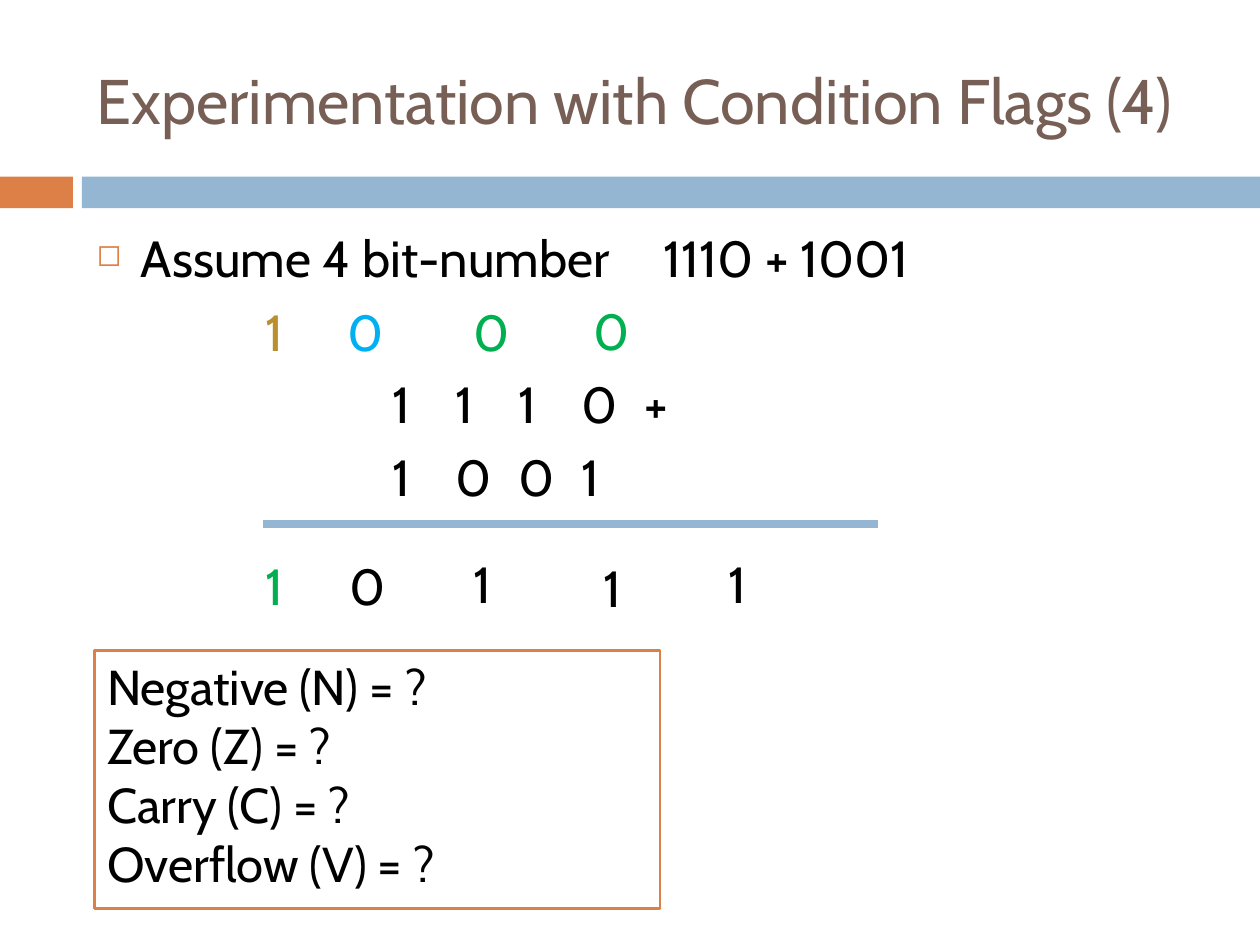
from lxml import etree
from pptx import Presentation
from pptx.dml.color import RGBColor
from pptx.enum.shapes import MSO_CONNECTOR, MSO_SHAPE
from pptx.enum.text import MSO_ANCHOR, MSO_AUTO_SIZE, PP_ALIGN
from pptx.oxml.ns import qn
from pptx.util import Cm, Pt

RECTANGLE = MSO_SHAPE.RECTANGLE
STRAIGHT = MSO_CONNECTOR.STRAIGHT
TOP, MIDDLE = MSO_ANCHOR.TOP, MSO_ANCHOR.MIDDLE
LEFT = PP_ALIGN.LEFT
FIT_SHAPE = MSO_AUTO_SIZE.SHAPE_TO_FIT_TEXT

BLACK, WHITE, BROWN = "000000", "FFFFFF", "775F55"
ORANGE, BLUE = "DD8047", "94B6D2"
GREEN, SKY, GOLD = "00B050", "00B0F0", "BA8F2D"

BODY_INDENT = 0.89
FIRST_BIT_INDENT = BODY_INDENT + 2 * 2.54


def color(value):
    return RGBColor.from_string(value)


def apply_format(target, values):
    for name, value in values.items():
        setattr(target, name, value)


def write(paragraph, text, size, text_color=BLACK, **values):
    apply_format(paragraph, {"alignment": LEFT, **values})
    run = paragraph.add_run()
    run.text = text
    apply_format(run.font, {"name": "Cabin", "size": Pt(size)})
    run.font.color.rgb = color(text_color)


def add_text_frame(slide, box, **values):
    frame = slide.shapes.add_textbox(*map(Cm, box)).text_frame
    apply_format(frame, {"word_wrap": True, "vertical_anchor": TOP, **values})
    return frame


def add_rectangle(slide, box, fill, line=None):
    shape = slide.shapes.add_shape(RECTANGLE, *map(Cm, box))
    shape.shadow.inherit = False
    shape.fill.solid()
    shape.fill.fore_color.rgb = color(fill)
    if line:
        shape.line.color.rgb = color(line)
        shape.line.width = Pt(1.5)
    else:
        shape.line.fill.background()
    return shape


def set_indent(paragraph, margin, first_line=0):
    properties = paragraph._p.get_or_add_pPr()
    properties.set("marL", str(Cm(margin)))
    properties.set("indent", str(Cm(first_line)))
    return properties


def add_square_bullet(properties):
    bullet_color = etree.SubElement(properties, qn("a:buClr"))
    etree.SubElement(bullet_color, qn("a:srgbClr"), val=ORANGE)
    etree.SubElement(properties, qn("a:buSzPct"), val="60000")
    etree.SubElement(properties, qn("a:buChar"), char="◻")


def add_header(slide, box):
    left, top, width, height = box
    # Title
    frame = add_text_frame(slide, (left + 1.7, top + 0.64, 22.66, 2.74),
                           vertical_anchor=MIDDLE)
    write(frame.paragraphs[0], "Experimentation with Condition Flags (4)", 36, BROWN)
    # Two-coloured band along the bottom
    band_height, blue_left = 0.64, 1.65
    band_top = top + height - band_height
    add_rectangle(slide, (left, band_top, 1.47, band_height), ORANGE)
    add_rectangle(slide, (left + blue_left, band_top, width - blue_left, band_height), BLUE)


def add_operands(slide, box):
    frame = add_text_frame(slide, box)
    # Task with its bullet
    task = frame.paragraphs[0]
    write(task, "Assume 4 bit-number\t1110 + 1001", 29, space_before=Pt(7))
    add_square_bullet(set_indent(task, BODY_INDENT, -BODY_INDENT))
    # Operands, leaving room above for the carry digits
    for bits, space in (("1\t1\t1\t0\t+", 48.7), ("1\t0\t0\t1", 7)):
        paragraph = frame.add_paragraph()
        write(paragraph, bits, 29, space_before=Pt(space))
        set_indent(paragraph, FIRST_BIT_INDENT)


def add_digits(slide, left, top, digits):
    for digit, x, y, digit_color in digits:
        frame = add_text_frame(slide, (left + x, top + y, 1.09, 1.5),
                               word_wrap=False, auto_size=FIT_SHAPE)
        write(frame.paragraphs[0], digit, 29, digit_color)


def add_sum(slide, box):
    left, top, width, height = box
    # Carry digits
    add_digits(slide, left, top, [
        ("1", 0, 0, GOLD), ("0", 1.65, 0, SKY),
        ("0", 4.19, 0, GREEN), ("0", 6.6, -0.03, GREEN)])
    # Sum line
    line_left, line_top = left + 0.2, top + 4.63
    line = slide.shapes.add_connector(
        STRAIGHT, Cm(line_left), Cm(line_top), Cm(left + width), Cm(line_top))
    line.line.color.rgb = color(BLUE)
    line.line.width = Pt(4.5)
    etree.SubElement(line._element.spPr, qn("a:effectLst"))
    # Result digits
    add_digits(slide, left, top + height - 1.5, [
        ("1", 0, 0, GREEN), ("0", 1.68, 0, BLACK), ("1", 4.19, -0.03, BLACK),
        ("1", 6.81, 0.05, BLACK), ("1", 9.32, -0.03, BLACK)])


def add_flags(slide, box):
    frame = add_rectangle(slide, box, WHITE, ORANGE).text_frame
    apply_format(frame, {"word_wrap": True, "vertical_anchor": TOP})
    flags = ("Negative (N)", "Zero (Z)", "Carry (C)", "Overflow (V)")
    for index, flag in enumerate(flags):
        paragraph = frame.add_paragraph() if index else frame.paragraphs[0]
        write(paragraph, f"{flag} = ?", 28)


def main():
    presentation = Presentation()
    apply_format(presentation, {"slide_width": Cm(25.4), "slide_height": Cm(19.05)})
    slide = presentation.slides.add_slide(presentation.slide_layouts[6])
    add_header(slide, (0, 0, 25.4, 4.2))
    add_operands(slide, (1.7, 4.45, 22.66, 12.5))
    add_sum(slide, (5.11, 5.94, 12.59, 6.61))
    add_flags(slide, (1.91, 13.11, 11.4, 5.21))
    presentation.save("out.pptx")


if __name__ == "__main__":
    main()
